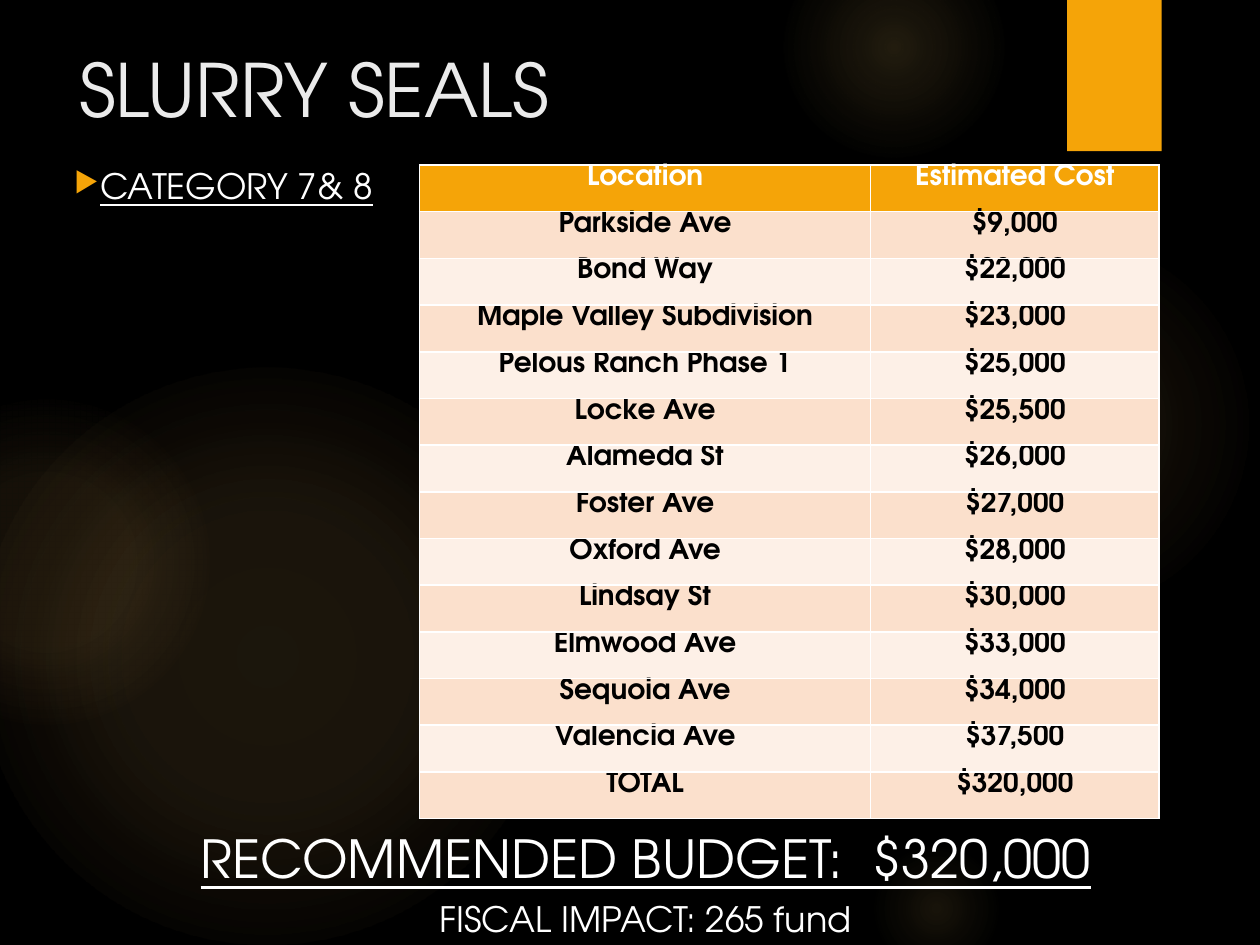
from lxml import etree
from pptx import Presentation
from pptx import util as u
from pptx.dml.color import RGBColor
from pptx.enum import shapes, text
from pptx.oxml import parse_xml
from pptx.oxml.ns import nsdecls, qn

FONT = "TeX Gyre Adventor"
BLACK = RGBColor(0, 0, 0)
WHITE = RGBColor(255, 255, 255)
PALE = RGBColor(0xEB, 0xEB, 0xEB)
GOLD = RGBColor(0xF5, 0xA4, 0x08)
GLOW = RGBColor(0xFA, 0xC9, 0x6A)
BANDS = [RGBColor(0xFD, 0xF0, 0xE7), RGBColor(0xFB, 0xE0, 0xCC)]

# Left, top, size, then gradient stops as (position %, opacity %)
ORBS = [
    (6.89, 1.83, 3.08, [(0, 7), (36, 6), (69, 0)]),
    (6.22, -0.5, 1.75, [(0, 14), (36, 7), (73, 0)]),
    (6.89, 6.67, 1.08, [(0, 10), (31, 5), (66, 0)]),
    (-0.17, 2.92, 4.58, [(0, 11), (36, 10), (75, 0)]),
    (-0.92, 3.17, 2.58, [(0, 8), (36, 8), (72, 0)]),
]

ROWS = [
    ("Location", "Estimated Cost"),
    ("Parkside Ave", "$9,000"),
    ("Bond Way", "$22,000"),
    ("Maple Valley Subdivision", "$23,000"),
    ("Pelous Ranch Phase 1", "$25,000"),
    ("Locke Ave", "$25,500"),
    ("Alameda St", "$26,000"),
    ("Foster Ave", "$27,000"),
    ("Oxford Ave", "$28,000"),
    ("Lindsay St", "$30,000"),
    ("Elmwood Ave", "$33,000"),
    ("Sequoia Ave", "$34,000"),
    ("Valencia Ave", "$37,500"),
    ("TOTAL", "$320,000"),
]


def inches(box):
    return [u.Inches(n) for n in box]


def write(para, words, size, color, align=None, **form):
    run = para.add_run()
    run.text = words
    run.font.color.rgb = color
    form.update(name=FONT, size=u.Pt(size))
    for key, val in form.items():
        setattr(run.font, key, val)
    para.alignment = align


def add_text(slide, box, words, size, color, **form):
    frame = slide.shapes.add_textbox(*inches(box)).text_frame
    frame.word_wrap = True
    para = frame.paragraphs[0]
    write(para, words, size, color, **form)
    return para


def add_shape(slide, kind, box):
    shape = slide.shapes.add_shape(kind, *inches(box))
    shape.shadow.inherit = False
    shape.line.fill.background()
    return shape


def add_orb(slide, box, stops):
    orb = add_shape(slide, shapes.MSO_SHAPE.OVAL, box)
    marks = "".join(
        f'<a:gs pos="{pos * 1000}"><a:srgbClr val="{GLOW}">'
        f'<a:alpha val="{alpha * 1000}"/></a:srgbClr></a:gs>'
        for pos, alpha in stops)
    fill = parse_xml(
        f'<a:gradFill {nsdecls("a")} rotWithShape="1"><a:gsLst>{marks}</a:gsLst>'
        '<a:path path="circle"><a:fillToRect l="50000" t="50000" r="50000" '
        'b="50000"/></a:path></a:gradFill>')
    orb._element.spPr.find(qn("a:prstGeom")).addnext(fill)


def add_backdrop(slide):
    slide.background.fill.solid()
    slide.background.fill.fore_color.rgb = BLACK
    for left, top, size, stops in ORBS:
        add_orb(slide, (left, top, size, size), stops)
    tab = add_shape(slide, shapes.MSO_SHAPE.RECTANGLE, (8.47, 0, 0.75, 1.2))
    tab.fill.solid()
    tab.fill.fore_color.rgb = GOLD


def add_topic(slide, box, words):
    para = add_text(slide, box, words, 20, WHITE, underline=True)
    para.line_spacing = 0.9
    para.space_before = u.Pt(10)
    props = para._p.get_or_add_pPr()
    props.set("marL", "0")
    props.set("indent", "0")
    color = etree.SubElement(props, qn("a:buClr"))
    etree.SubElement(color, qn("a:srgbClr"), val=str(GOLD))
    etree.SubElement(props, qn("a:buSzPct"), val="80000")
    etree.SubElement(props, qn("a:buChar"), char="▶")


def add_border(cell):
    props = cell._tc.get_or_add_tcPr()
    for spot, side in enumerate(("lnL", "lnR", "lnT", "lnB")):
        props.insert(spot, parse_xml(
            f'<a:{side} {nsdecls("a")} w="{u.Pt(1)}"><a:solidFill>'
            f'<a:srgbClr val="{WHITE}"/></a:solidFill></a:{side}>'))


def add_costs(slide, box):
    table = slide.shapes.add_table(len(ROWS), 2, *inches(box)).table
    for col, width in zip(table.columns, (3.58, 2.29)):
        col.width = u.Inches(width)
    for i, row in enumerate(ROWS):
        for j, words in enumerate(row):
            cell = table.cell(i, j)
            cell.margin_top = cell.margin_bottom = 0
            cell.fill.solid()
            cell.fill.fore_color.rgb = BANDS[i % 2] if i else GOLD
            write(cell.text_frame.paragraphs[0], words, 16,
                  BLACK if i else WHITE, text.PP_ALIGN.CENTER, bold=True)
            add_border(cell)


def add_budget(slide, box):
    left, top, width, height = box
    lines = [
        (0, 0.61, "RECOMMENDED BUDGET:  $320,000", 30, True),
        (0.56, 0.44, "FISCAL IMPACT: 265 fund", 20, False),
    ]
    for drop, tall, words, size, under in lines:
        para = add_text(slide, (left, top + drop, width, tall), words, size,
                        WHITE, align=text.PP_ALIGN.CENTER, underline=under)
        para.space_after = u.Pt(6)


def main():
    deck = Presentation()
    deck.slide_width, deck.slide_height = u.Inches(10), u.Inches(7.5)
    slide = deck.slides.add_slide(deck.slide_layouts[6])
    add_backdrop(slide)
    # Heading and topic
    add_text(slide, (0.53, 0.3, 7.59, 1.11), "SLURRY SEALS", 42, PALE)
    add_topic(slide, (0.49, 1.29, 5.87, 0.61), "CATEGORY 7& 8")
    # Cost table and closing lines
    add_costs(slide, (3.33, 1.31, 5.87, 5.19))
    add_budget(slide, (1.33, 6.51, 7.59, 1))
    deck.save("out.pptx")


if __name__ == "__main__":
    main()
